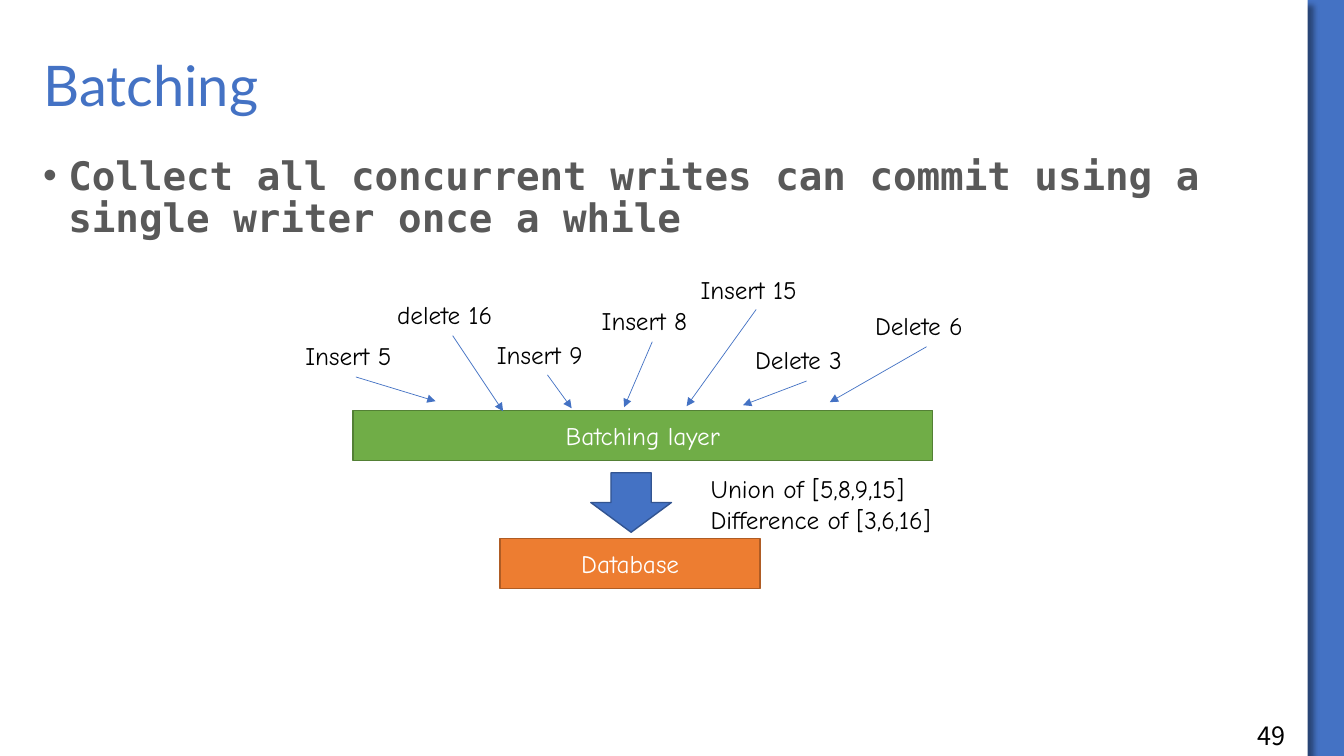
from typing import NamedTuple

from lxml.etree import SubElement
from pptx import Presentation
from pptx.dml.color import RGBColor
from pptx.enum.shapes import MSO_CONNECTOR, MSO_SHAPE
from pptx.enum.text import MSO_ANCHOR, MSO_AUTO_SIZE, PP_ALIGN
from pptx.oxml.ns import qn
from pptx.util import Inches, Pt

HUES = {
    "blue": "4472C4", "navy": "325491", "white": "FFFFFF", "black": "000000",
    "green": "70AD47", "moss": "538035", "orange": "ED7D31", "rust": "AF5C24",
    "grey": "595959",
}


class Box(NamedTuple):
    left: float
    top: float
    width: float
    height: float


class Block(NamedTuple):
    kind: MSO_SHAPE
    box: Box
    fill: str
    line: str
    text: str = ""


class Write(NamedTuple):
    text: str
    box: Box
    start: tuple[float, float]
    end: tuple[float, float]


BLOCKS = [
    Block(MSO_SHAPE.RECTANGLE, Box(3.5, 4.07, 5.75, 0.5), "green", "moss", "Batching layer"),
    Block(MSO_SHAPE.DOWN_ARROW, Box(5.86, 4.69, 0.8, 0.59), "blue", "navy"),
    Block(MSO_SHAPE.RECTANGLE, Box(4.96, 5.34, 2.58, 0.5), "orange", "rust", "Database"),
]

WRITES = [
    Write("Insert 5", Box(2.93, 3.33, 1.2, 0.4), (3.53, 3.74), (4.32, 3.98)),
    Write("delete 16", Box(3.84, 2.92, 1.3, 0.4), (4.49, 3.33), (4.99, 4.08)),
    Write("Insert 9", Box(4.83, 3.32, 1.2, 0.4), (5.43, 3.72), (5.67, 4.05)),
    Write("Insert 8", Box(5.87, 2.98, 1.2, 0.4), (6.47, 3.39), (6.19, 4.04)),
    Write("Insert 15", Box(6.85, 2.67, 1.32, 0.4), (7.5, 3.07), (6.81, 4.03)),
    Write("Delete 3", Box(7.39, 3.37, 1.22, 0.4), (8, 3.78), (7.37, 4.02)),
    Write("Delete 6", Box(8.58, 3.03, 1.22, 0.4), (9.19, 3.44), (8.23, 3.99)),
]


def tint(name: str) -> RGBColor:
    return RGBColor.from_string(HUES[name])


def place(box: Box) -> list[int]:
    return [Inches(side) for side in box]


def put_text(shape, text: str, *, font: str = "Comic Neue", size: int = 18,
             hue: str = "black", bold: bool = False, wrap: bool = True,
             align=PP_ALIGN.LEFT, anchor=MSO_ANCHOR.TOP,
             fit=MSO_AUTO_SIZE.NONE, space: float = 1.0) -> None:
    frame = shape.text_frame
    frame.text = text
    frame.word_wrap = wrap
    frame.auto_size = fit
    frame.vertical_anchor = anchor
    for para in frame.paragraphs:
        para.alignment = align
        para.line_spacing = space
        style = para.font
        style.name, style.size, style.bold = font, Pt(size), bold
        style.color.rgb = tint(hue)


def add_text(slide, text: str, box: Box, **look):
    shape = slide.shapes.add_textbox(*place(box))
    put_text(shape, text, **look)
    return shape


def add_label(slide, text: str, box: Box) -> None:
    add_text(slide, text, box, wrap=False, fit=MSO_AUTO_SIZE.SHAPE_TO_FIT_TEXT)


def add_block(slide, block: Block) -> None:
    shape = slide.shapes.add_shape(block.kind, *place(block.box))
    shape.shadow.inherit = False
    shape.fill.solid()
    shape.fill.fore_color.rgb = tint(block.fill)
    shape.line.color.rgb = tint(block.line)
    shape.line.width = Pt(1)
    if block.text:
        put_text(shape, block.text, hue="white", align=PP_ALIGN.CENTER,
                 anchor=MSO_ANCHOR.MIDDLE)


def add_arrow(slide, start: tuple[float, float], end: tuple[float, float]) -> None:
    ends = [Inches(value) for value in (*start, *end)]
    arrow = slide.shapes.add_connector(MSO_CONNECTOR.STRAIGHT, *ends)
    arrow.line.color.rgb = tint("blue")
    arrow.line.width = Pt(0.5)
    SubElement(arrow.line._get_or_add_ln(), qn("a:tailEnd"), type="triangle")
    SubElement(arrow.element.spPr, qn("a:effectLst"))


def add_panel(slide) -> None:
    panel = slide.shapes.add_shape(MSO_SHAPE.RECTANGLE, *place(Box(0, 0, 12.97, 7.5)))
    panel.fill.solid()
    panel.fill.fore_color.rgb = tint("white")
    panel.line.fill.background()
    panel.shadow.inherit = False
    glow = SubElement(panel.element.spPr.find(qn("a:effectLst")), qn("a:outerShdw"),
                      blurRad=str(Pt(4)), dist=str(Pt(6)), dir="2700000",
                      algn="tl", rotWithShape="0")
    shade = SubElement(glow, qn("a:srgbClr"), val=HUES["black"])
    SubElement(shade, qn("a:alpha"), val="40000")


def add_title(slide) -> None:
    title = slide.shapes.title
    slide.shapes.element.append(title.element)
    title.left, title.top, title.width, title.height = place(Box(0.33, 0.5, 12.33, 0.75))
    put_text(title, "Batching", font="Lato", size=40, hue="blue",
             anchor=MSO_ANCHOR.MIDDLE, space=0.9)


def add_point(slide) -> None:
    point = add_text(
        slide, "Collect all concurrent writes can commit using a single writer once a while",
        Box(0.33, 1.5, 12.33, 2.83), font="DejaVu Sans Mono", size=28, hue="grey",
        bold=True, space=0.9)
    para = point.text_frame.paragraphs[0]
    para.space_before = Pt(6)
    props = para._p.get_or_add_pPr()
    props.set("marL", str(Inches(0.25)))
    props.set("indent", str(Inches(-0.25)))
    mark = props.find(qn("a:defRPr"))
    face = SubElement(props, qn("a:buFont"), typeface="Arial")
    dot = SubElement(props, qn("a:buChar"), char="•")
    if mark is not None:
        mark.addprevious(face)
        mark.addprevious(dot)
    for run in para.runs:
        run.font.name, run.font.size, run.font.bold = "DejaVu Sans Mono", Pt(28), True
        run.font.color.rgb = tint("grey")


def main() -> None:
    deck = Presentation()
    deck.slide_width, deck.slide_height = Inches(13.33), Inches(7.5)
    slide = deck.slides.add_slide(deck.slide_layouts[5])
    slide.background.fill.solid()
    slide.background.fill.fore_color.rgb = tint("blue")
    add_panel(slide)
    add_title(slide)
    add_text(slide, "49", Box(12.37, 7.1, 0.86, 0.4), font="Noto Sans CJK SC")
    for block in BLOCKS:
        add_block(slide, block)
    for write in WRITES:
        add_arrow(slide, write.start, write.end)
        add_label(slide, write.text, write.box)
    add_label(slide, "Union of [5,8,9,15]\nDifference of [3,6,16]", Box(6.95, 4.65, 2.83, 0.71))
    add_point(slide)
    deck.save("out.pptx")


if __name__ == "__main__":
    main()
